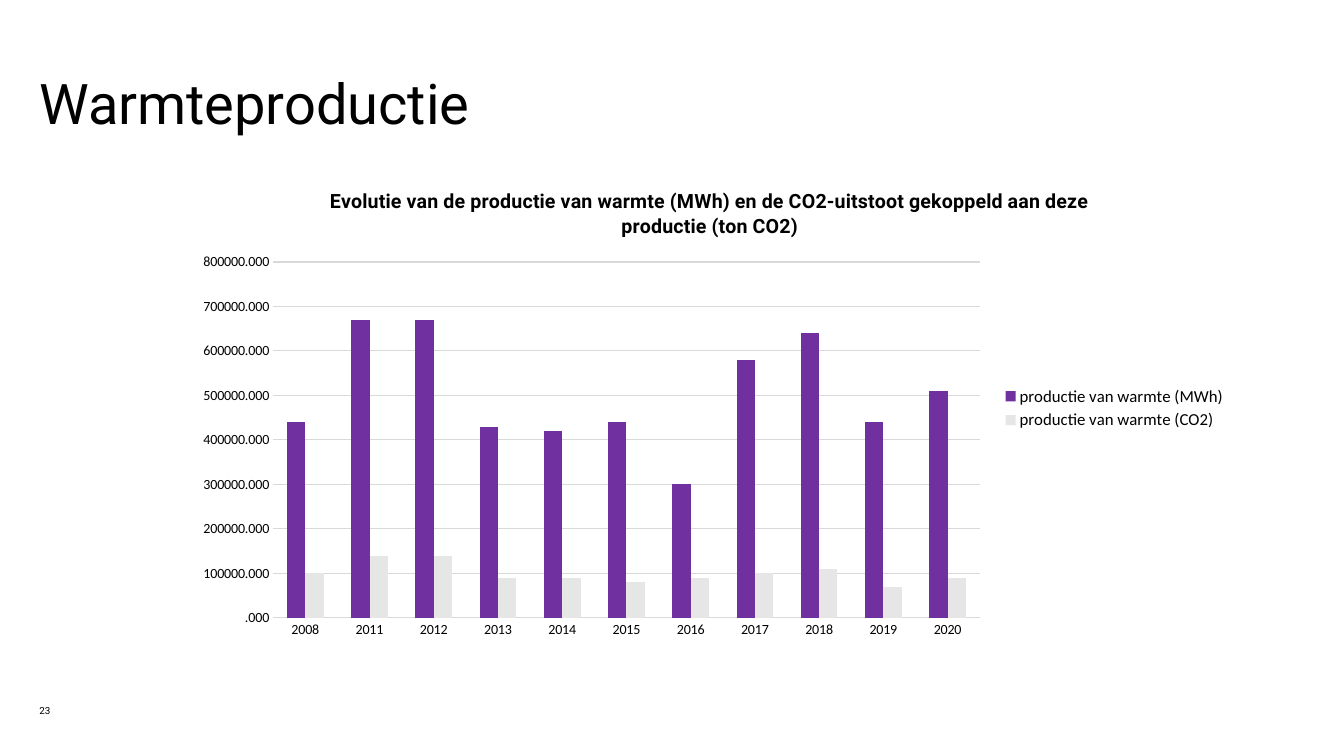
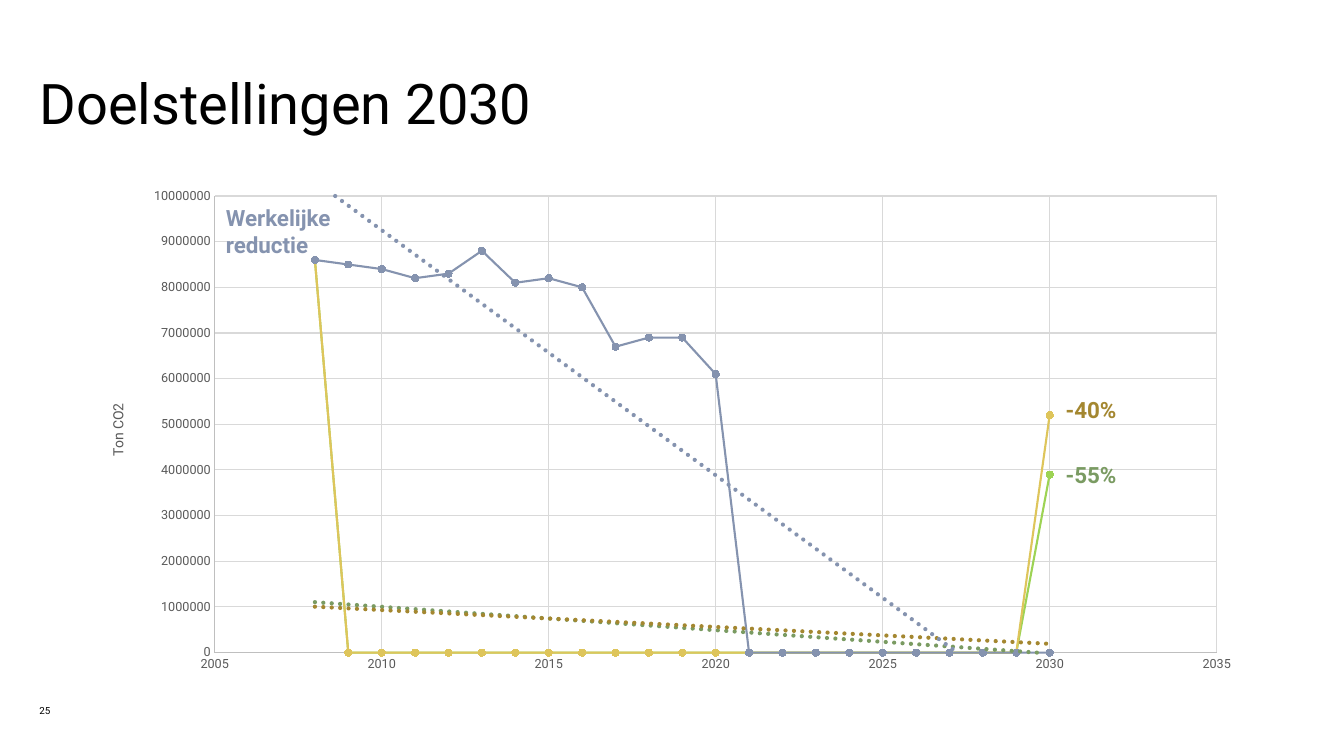
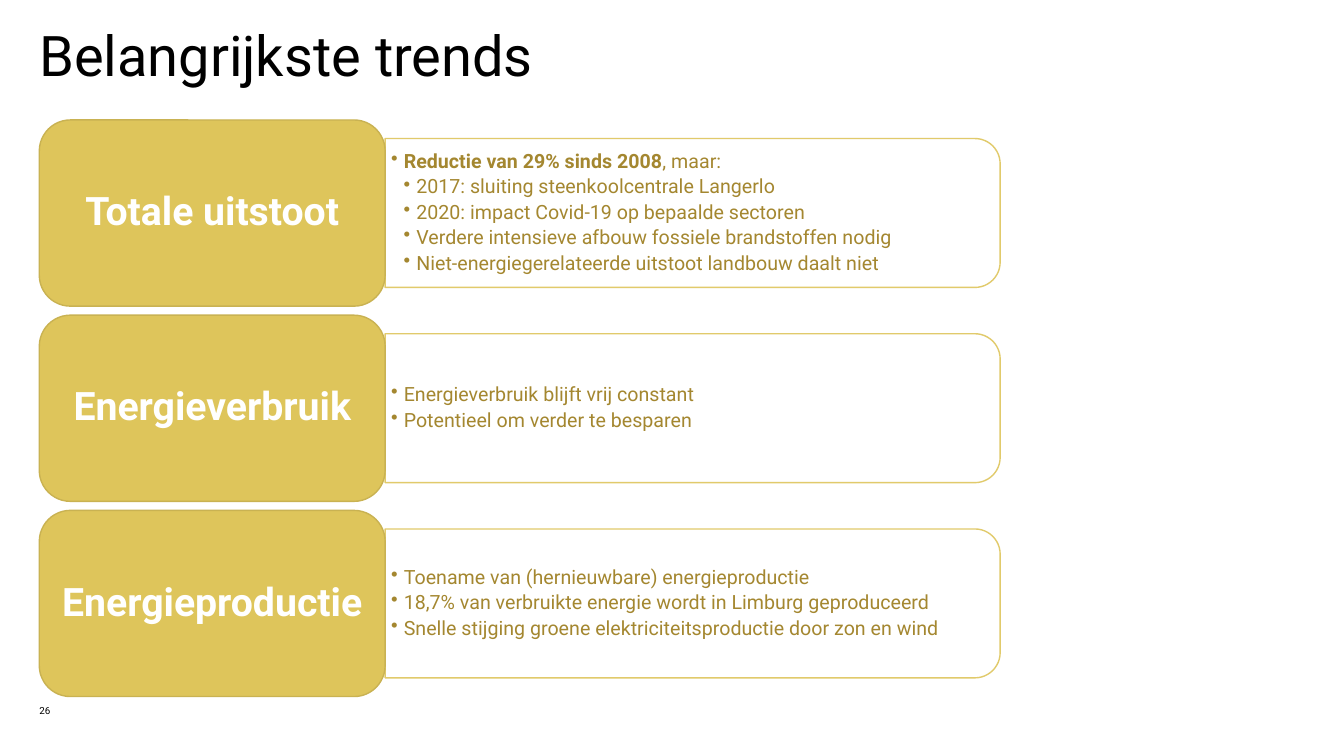
import math
from dataclasses import dataclass

import lxml.etree
import pptx
import pptx.chart.data
import pptx.dml.color
import pptx.enum.chart
import pptx.enum.shapes
import pptx.enum.text
import pptx.oxml.ns
import pptx.util

Inches = pptx.util.Inches
Pt = pptx.util.Pt
qn = pptx.oxml.ns.qn


@dataclass(frozen=True)
class Theme:
    font: str = "Roboto"
    chart_font: str = "Calibri"
    black: str = "000000"
    white: str = "FFFFFF"
    purple: str = "7030A0"
    pale_grey: str = "E7E6E6"
    grid: str = "D9D9D9"
    axis: str = "BFBFBF"
    axis_text: str = "595959"
    slate: str = "8593AF"
    gold: str = "DEC55B"
    gold_edge: str = "C9B252"
    bronze: str = "A48730"
    lime: str = "9DD354"
    green: str = "7A9B62"
    title_size: int = 40
    block_size: int = 28
    label_size: int = 16
    body_size: int = 14
    legend_size: int = 12
    chart_size: int = 10
    tick_size: int = 9
    number_size: int = 7
    margin: float = 0.39


THEME = Theme()

HEAT_YEARS = ["2008"] + [str(year) for year in range(2011, 2021)]
HEAT_SERIES = [
    ("productie van warmte (MWh)", THEME.purple,
     [440000, 670000, 670000, 430000, 420000, 440000,
      300000, 580000, 640000, 440000, 510000]),
    ("productie van warmte (CO2)", THEME.pale_grey,
     [100000, 140000, 140000, 90000, 90000, 80000,
      90000, 100000, 110000, 70000, 90000]),
]

TARGET_YEARS = range(2008, 2031)
START_EMISSION = 8600000
MEASURED = [START_EMISSION, 8500000, 8400000, 8200000, 8300000, 8800000,
            8100000, 8200000, 8000000, 6700000, 6900000, 6900000, 6100000]
# name, line colour, trend colour, yearly emissions, label box
TARGET_SERIES = [
    ("Werkelijke reductie", THEME.slate, THEME.slate,
     MEASURED + [0] * 10, (2.24, 2.03, 1.85, 0.27)),
    ("-40%", THEME.gold, THEME.bronze,
     [START_EMISSION] + [0] * 21 + [5200000], (10.57, 3.93, 1.52, 0.27)),
    ("-55%", THEME.lime, THEME.green,
     [START_EMISSION] + [0] * 21 + [3900000], (10.57, 4.57, 1.68, 0.27)),
]

# heading, then (level, bold part, plain part) for each bullet
TRENDS = [
    ("Totale uitstoot", [
        (1, "Reductie van 29% sinds 2008", ", maar:"),
        (2, "", "2017: sluiting steenkoolcentrale Langerlo"),
        (2, "", "2020: impact Covid-19 op bepaalde sectoren"),
        (2, "", "Verdere intensieve afbouw fossiele brandstoffen nodig"),
        (2, "", "Niet-energiegerelateerde uitstoot landbouw daalt niet"),
    ]),
    ("Energieverbruik", [
        (1, "", "Energieverbruik blijft vrij constant"),
        (1, "", "Potentieel om verder te besparen"),
    ]),
    ("Energieproductie", [
        (1, "", "Toename van (hernieuwbare) energieproductie"),
        (1, "", "18,7% van verbruikte energie wordt in Limburg geproduceerd"),
        (1, "", "Snelle stijging groene elektriciteitsproductie door zon en wind"),
    ]),
]


def rgb(color):
    return pptx.dml.color.RGBColor.from_string(color)


def assign(target, values):
    for name, value in values.items():
        setattr(target, name, value)


def style_font(font, size, color=THEME.black, name=THEME.font, bold=False):
    assign(font, {"size": Pt(size), "name": name, "bold": bold})
    font.color.rgb = rgb(color)


def style_line(line, color, width):
    line.color.rgb = rgb(color)
    line.width = Pt(width)


def style_fill(fill, color):
    fill.solid()
    fill.fore_color.rgb = rgb(color)


def set_frame(frame, insets=(0, 0, 0, 0), anchor="TOP"):
    sides = ("margin_left", "margin_top", "margin_right", "margin_bottom")
    assign(frame, {side: Inches(inset) for side, inset in zip(sides, insets)})
    assign(frame, {"word_wrap": True,
                   "vertical_anchor": getattr(pptx.enum.text.MSO_ANCHOR, anchor)})


def add_run(paragraph, text, size, color=THEME.black, bold=False):
    run = paragraph.add_run()
    run.text = text
    style_font(run.font, size, color, bold=bold)


def add_text(slide, box, text, size, color=THEME.black, bold=False,
             anchor="TOP", spacing=None):
    frame = slide.shapes.add_textbox(*map(Inches, box)).text_frame
    set_frame(frame, anchor=anchor)
    paragraph = frame.paragraphs[0]
    paragraph.line_spacing = spacing
    add_run(paragraph, text, size, color, bold)


def new_slide(deck, title, number, title_box=(THEME.margin, 0.79, 12.55, 0.89)):
    slide = deck.slides.add_slide(deck.slide_layouts[6])
    add_text(slide, title_box, title, THEME.title_size, spacing=0.83)
    add_text(slide, (THEME.margin, 6.91, 0.39, 0.2), str(number),
             THEME.number_size, anchor="BOTTOM")
    return slide


def add_chart(slide, kind, box, data, font):
    chart_type = getattr(pptx.enum.chart.XL_CHART_TYPE, kind)
    chart = slide.shapes.add_chart(chart_type, *map(Inches, box), data).chart
    style_font(chart.font, THEME.chart_size, name=font)
    chart.plots[0].vary_by_categories = False
    return chart


def place_plot(chart, fractions):
    """Fix the inner plot area as x, y, w, h fractions of the chart."""
    area = chart._chartSpace.find(".//" + qn("c:plotArea"))
    for layout in area.findall(qn("c:layout")):
        area.remove(layout)
    layout = lxml.etree.Element(qn("c:layout"))
    area.insert(0, layout)
    manual = lxml.etree.SubElement(layout, qn("c:manualLayout"))
    settings = [("layoutTarget", "inner"), ("xMode", "edge"), ("yMode", "edge")]
    settings += zip("xywh", fractions)
    for tag, value in settings:
        lxml.etree.SubElement(manual, qn("c:" + tag), val=str(value))


def style_axis(axis, size, color, font, number_format, line, grid, scale=None):
    no_tick = pptx.enum.chart.XL_TICK_MARK.NONE
    assign(axis, {"major_tick_mark": no_tick, "minor_tick_mark": no_tick,
                  "has_major_gridlines": grid})
    labels = axis.tick_labels
    assign(labels, {"number_format": number_format,
                    "number_format_is_linked": False})
    style_font(labels.font, size, color, font)
    if grid:
        style_line(axis.major_gridlines.format.line, THEME.grid, 0.75)
    if line:
        style_line(axis.format.line, line, 0.75)
    else:
        axis.format.line.fill.background()
    if scale:
        names = ("minimum_scale", "maximum_scale", "major_unit")
        assign(axis, dict(zip(names, scale)))


def add_trend_line(series, color, width):
    trend = lxml.etree.Element(qn("c:trendline"))
    series._element.find(qn("c:xVal")).addprevious(trend)
    properties = lxml.etree.SubElement(trend, qn("c:spPr"))
    line = lxml.etree.SubElement(properties, qn("a:ln"),
                                 w=str(Pt(width)), cap="rnd")
    fill = lxml.etree.SubElement(line, qn("a:solidFill"))
    lxml.etree.SubElement(fill, qn("a:srgbClr"), val=color)
    lxml.etree.SubElement(line, qn("a:prstDash"), val="sysDot")
    for tag, value in (("trendlineType", "linear"), ("dispRSqr", "0"),
                       ("dispEq", "0")):
        lxml.etree.SubElement(trend, qn("c:" + tag), val=value)


def add_heat_chart(slide):
    data = pptx.chart.data.CategoryChartData(number_format="#.##0")
    data.categories = HEAT_YEARS
    for name, _, production in HEAT_SERIES:
        data.add_series(name, production)
    chart = add_chart(slide, "COLUMN_CLUSTERED", (1.81, 1.68, 10.46, 4.74),
                      data, THEME.chart_font)
    place_plot(chart, (0.086, 0.194, 0.67, 0.745))

    heading = chart.chart_title.text_frame.paragraphs[0]
    add_run(heading, "Evolutie van de productie van warmte (MWh) en de CO2-uitstoot "
            "gekoppeld aan deze productie (ton CO2)", THEME.body_size, bold=True)
    chart.has_legend = True
    assign(chart.legend, {
        "position": pptx.enum.chart.XL_LEGEND_POSITION.RIGHT,
        "include_in_layout": False})
    style_font(chart.legend.font, THEME.legend_size, name=THEME.chart_font)

    text = (THEME.chart_size, THEME.black, THEME.chart_font, "#.##0")
    style_axis(chart.category_axis, *text, line=THEME.grid, grid=False)
    style_axis(chart.value_axis, *text, line=None, grid=True,
               scale=(0, 800000, 100000))
    assign(chart.plots[0], {"gap_width": 150, "overlap": 0})
    for series, (_, color, _) in zip(chart.plots[0].series, HEAT_SERIES):
        style_fill(series.format.fill, color)


def add_target_chart(slide):
    data = pptx.chart.data.XyChartData()
    for name, _, _, emissions, _ in TARGET_SERIES:
        points = data.add_series(name)
        for year, emission in zip(TARGET_YEARS, emissions):
            points.add_data_point(year, emission)
    chart = add_chart(slide, "XY_SCATTER_LINES", (0.88, 1.77, 11.57, 4.99),
                      data, THEME.font)
    assign(chart, {"has_legend": False, "has_title": False})
    place_plot(chart, (0.108, 0.035, 0.859, 0.908))

    text = (THEME.tick_size, THEME.axis_text, THEME.font, "General")
    for axis, scale in ((chart.category_axis, (2005, 2035, 5)),
                        (chart.value_axis, (0, 10000000, 1000000))):
        style_axis(axis, *text, line=THEME.axis, grid=True, scale=scale)
    unit = chart.value_axis.axis_title.text_frame
    unit._txBody.find(qn("a:bodyPr")).set("rot", "-5400000")
    add_run(unit.paragraphs[0], "Ton CO2", THEME.chart_size, THEME.axis_text)

    for series, (_, color, trend_color, _, _) in zip(chart.plots[0].series,
                                                     TARGET_SERIES):
        series.smooth = False
        style_line(series.format.line, color, 1.5)
        assign(series.marker, {
            "style": pptx.enum.chart.XL_MARKER_STYLE.CIRCLE, "size": 5})
        style_fill(series.marker.format.fill, color)
        style_line(series.marker.format.line, color, 0.75)
        add_trend_line(series, trend_color, 3)


def add_bullet(paragraph, level, bold_part, plain_part):
    properties = paragraph._p.get_or_add_pPr()
    properties.set("marL", str(Inches(0.125 * level)))
    properties.set("indent", str(Inches(-0.125)))
    lxml.etree.SubElement(properties, qn("a:buChar"), char="•")
    assign(paragraph, {"line_spacing": 0.9, "space_after": Pt(3)})
    style_font(paragraph.font, THEME.body_size, THEME.bronze)
    for text, bold in ((bold_part, True), (plain_part, False)):
        if text:
            add_run(paragraph, text, THEME.body_size, THEME.bronze, bold)


def add_panel(slide, left, top, width, height, bullets):
    """Outline with square left corners and round right corners."""
    radius, steps = 0.25, 12
    right, bottom = left + width, top + height
    outline = [(left, top)]
    for center_y, start in ((top + radius, -90), (bottom - radius, 0)):
        for step in range(steps + 1):
            angle = math.radians(start + 90 * step / steps)
            outline.append((right - radius + radius * math.cos(angle),
                            center_y + radius * math.sin(angle)))
    outline.append((left, bottom))
    corners = [(Inches(x), Inches(y)) for x, y in outline]
    builder = slide.shapes.build_freeform(*corners[0], scale=1.0)
    builder.add_line_segments(corners[1:], close=True)
    panel = builder.convert_to_shape()
    panel.shadow.inherit = False
    style_fill(panel.fill, THEME.white)
    style_line(panel.line, THEME.gold, 1)
    for color in panel._element.spPr.iter(qn("a:srgbClr")):
        lxml.etree.SubElement(color, qn("a:alpha"), val="90000")

    frame = panel.text_frame
    set_frame(frame, (0.06, 0.1, 0.13, 0.1), "MIDDLE")
    for index, bullet in enumerate(bullets):
        paragraph = frame.add_paragraph() if index else frame.paragraphs[0]
        paragraph.alignment = pptx.enum.text.PP_ALIGN.LEFT
        add_bullet(paragraph, *bullet)


def add_block(slide, box, heading):
    block = slide.shapes.add_shape(
        pptx.enum.shapes.MSO_SHAPE.ROUNDED_RECTANGLE, *map(Inches, box))
    block.shadow.inherit = False
    style_fill(block.fill, THEME.gold)
    style_line(block.line, THEME.gold_edge, 1)
    set_frame(block.text_frame, (0.05, 0.05, 0.05, 0.05), "MIDDLE")
    paragraph = block.text_frame.paragraphs[0]
    assign(paragraph, {"alignment": pptx.enum.text.PP_ALIGN.CENTER,
                       "line_spacing": 0.9})
    add_run(paragraph, heading, THEME.block_size, THEME.white, bold=True)


def add_trend_rows(slide):
    stack_top, stack_height, gap = 1.19, 5.72, 0.09
    block_width, panel_width = 3.43, 6.1
    height = (stack_height - gap * (len(TRENDS) - 1)) / len(TRENDS)
    panel_height = 0.8 * height
    for row, (heading, bullets) in enumerate(TRENDS):
        top = stack_top + row * (height + gap)
        add_panel(slide, THEME.margin + block_width,
                  top + (height - panel_height) / 2,
                  panel_width, panel_height, bullets)
        add_block(slide, (THEME.margin, top, block_width, height), heading)


def main():
    deck = pptx.Presentation()
    assign(deck, {"slide_width": Inches(13.33), "slide_height": Inches(7.5)})

    add_heat_chart(new_slide(deck, "Warmteproductie", 23))

    targets = new_slide(deck, "Doelstellingen 2030", 25)
    add_target_chart(targets)
    for label, _, color, _, box in TARGET_SERIES:
        add_text(targets, box, label, THEME.label_size, color, bold=True)

    add_trend_rows(new_slide(deck, "Belangrijkste trends", 26,
                             (THEME.margin, 0.32, 7.15, 1.18)))
    deck.save("out.pptx")


if __name__ == "__main__":
    main()
